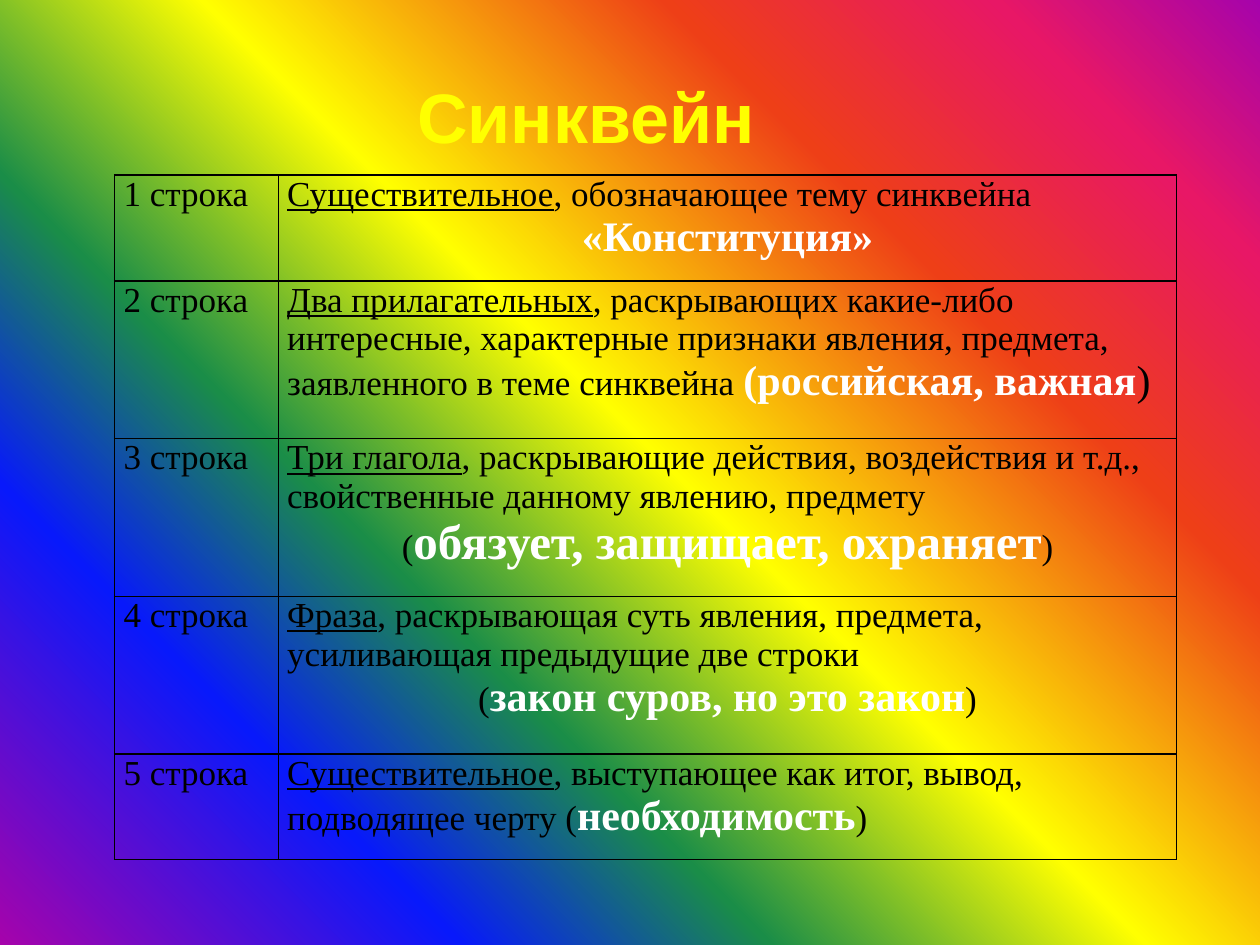
"""Builds the slide that explains the five lines of a cinquain."""
from lxml import etree
from pptx import Presentation
from pptx.dml.color import RGBColor
from pptx.enum.text import MSO_ANCHOR, MSO_AUTO_SIZE, PP_ALIGN
from pptx.oxml.ns import qn
from pptx.util import Cm, Pt

CENTER, LEFT = PP_ALIGN.CENTER, PP_ALIGN.LEFT
MIDDLE = MSO_ANCHOR.MIDDLE
GROW = MSO_AUTO_SIZE.SHAPE_TO_FIT_TEXT

COLORS = {"title": "FFFF00", "text": "000000", "answer": "FFFFFF", "border": "000000"}
RAINBOW = [(0, "A603AB"), (21, "0819FB"), (35, "1A8D48"), (52, "FFFF00"),
           (73, "EE3F17"), (88, "E81766"), (100, "A603AB")]
RAINBOW_ANGLE = 315

TITLE = "Синквейн "
STYLES = {
    "term": (20, "text", False, True),
    "plain": (20, "text", False, False),
    "large": (24, "text", False, False),
    "answer": (24, "answer", True, False),
    "big answer": (28, "answer", True, False),
}
ROWS = [
    (2.13, [
        (LEFT, [("term", "Существительное"), ("plain", ", обозначающее тему синквейна")]),
        (CENTER, [("answer", "«Конституция»")]),
    ]),
    (3.18, [
        (LEFT, [("term", "Два прилагательных"),
                ("plain", ", раскрывающих какие-либо интересные, характерные признаки "
                          "явления, предмета, заявленного в теме синквейна "),
                ("answer", "(российская, важная"), ("large", ")")]),
    ]),
    (3.18, [
        (LEFT, [("term", "Три глагола"),
                ("plain", ", раскрывающие действия, воздействия и т.д., "
                          "свойственные данному явлению, предмету")]),
        (CENTER, [("plain", "("), ("big answer", "обязует, защищает, охраняет"), ("plain", ")")]),
    ]),
    (3.18, [
        (LEFT, [("term", "Фраза"),
                ("plain", ", раскрывающая суть явления, предмета, "
                          "усиливающая предыдущие две строки")]),
        (CENTER, [("plain", "("), ("answer", "закон суров, но это закон"), ("plain", ")")]),
    ]),
    (2.13, [
        (LEFT, [("term", "Существительное"),
                ("plain", ", выступающее как итог, вывод, подводящее черту ("),
                ("answer", "необходимость"), ("plain", ")")]),
    ]),
]
COL_WIDTHS = [3.3, 18.11]


def rgb(name):
    return RGBColor.from_string(COLORS[name])


def paint_background(s):
    fill = s.background.fill
    fill.gradient()
    grad = s.element.find(".//" + qn("a:gradFill"))
    stops = grad.find(qn("a:gsLst"))
    for stop in list(stops):
        stops.remove(stop)
    for pos, color in RAINBOW:
        gs = etree.SubElement(stops, qn("a:gs"), pos=str(pos * 1000))
        etree.SubElement(gs, qn("a:srgbClr"), val=color)
    fill.gradient_angle = 360 - RAINBOW_ANGLE


def add_title(s):
    box = s.shapes.add_textbox(Cm(6.71), Cm(1.35), Cm(10.59), Cm(1.96))
    tf = box.text_frame
    tf.word_wrap = True
    tf.auto_size = GROW
    tf.vertical_anchor = MIDDLE
    p = tf.paragraphs[0]
    p.text = TITLE
    p.alignment = CENTER
    p.font.name, p.font.size, p.font.bold = "Arial", Pt(40), True
    p.font.color.rgb = rgb("title")


def format_cell(cell):
    cell.margin_left = cell.margin_right = Cm(0.18)
    cell.margin_top = cell.margin_bottom = 0
    tcPr = cell._tc.get_or_add_tcPr()
    for side in ("lnL", "lnR", "lnT", "lnB"):
        ln = etree.SubElement(tcPr, qn("a:" + side), w=str(Pt(1)))
        solid = etree.SubElement(ln, qn("a:solidFill"))
        etree.SubElement(solid, qn("a:srgbClr"), val=COLORS["border"])
    cell.fill.background()


def write_cell(cell, paragraphs):
    format_cell(cell)
    tf = cell.text_frame
    for i, (align, runs) in enumerate(paragraphs):
        p = tf.add_paragraph() if i else tf.paragraphs[0]
        p.alignment = align
        for style, text in runs:
            size, color, bold, underline = STYLES[style]
            r = p.add_run()
            r.text = text
            r.font.name, r.font.size = "Times New Roman", Pt(size)
            r.font.bold, r.font.underline = bold, underline
            r.font.color.rgb = rgb(color)


def add_rules(s):
    height = sum(h for h, _ in ROWS)
    table = s.shapes.add_table(len(ROWS), len(COL_WIDTHS), Cm(2.31), Cm(3.53),
                               Cm(sum(COL_WIDTHS)), Cm(height)).table
    table.first_row = table.horz_banding = False
    for column, width in zip(table.columns, COL_WIDTHS):
        column.width = Cm(width)
    for i, (row_height, paragraphs) in enumerate(ROWS):
        table.rows[i].height = Cm(row_height)
        write_cell(table.cell(i, 0), [(LEFT, [("plain", f"{i + 1} строка")])])
        write_cell(table.cell(i, 1), paragraphs)


def main():
    prs = Presentation()
    prs.slide_width, prs.slide_height = Cm(25.4), Cm(19.05)
    s = prs.slides.add_slide(prs.slide_layouts[6])
    paint_background(s)
    add_rules(s)
    add_title(s)
    prs.save("out.pptx")


if __name__ == "__main__":
    main()
